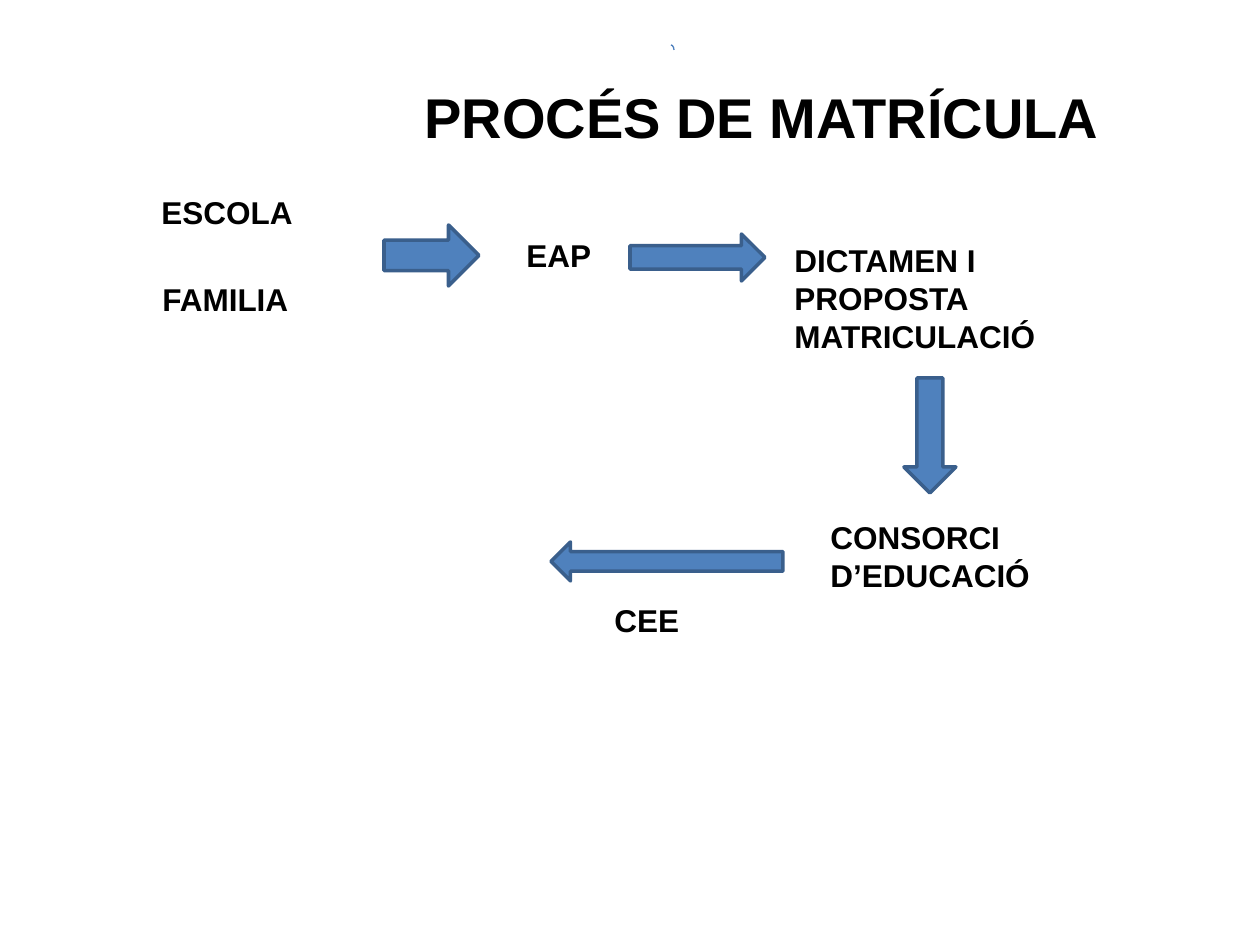
"""Build a one-slide flow diagram of the school enrolment process."""
from pptx import Presentation
from pptx.dml.color import RGBColor
from pptx.enum.shapes import MSO_SHAPE
from pptx.enum.text import MSO_AUTO_SIZE
from pptx.util import Emu, Pt

PIXEL = 914400 / 126
COLORS = {"text": "000000", "fill": "4F81BD", "outline": "3A5F8C", "arc": "4B7EBC"}

TITLE = ("PROCÉS DE MATRÍCULA", (412, 76, 706, 81))
FAMILY_LABELS = [
    ("ESCOLA", (149, 187, 157, 50)),
    ("FAMILIA", (150, 274, 152, 50)),
]
STEP_LABELS = [
    ("EAP", (514, 230, 154, 50)),
    ("DICTAMEN I PROPOSTA MATRICULACIÓ", (782, 235, 285, 127)),
    ("CONSORCI D’EDUCACIÓ", (818, 512, 268, 89)),
    ("CEE", (602, 595, 210, 50)),
]
ARROWS = [
    (MSO_SHAPE.RIGHT_ARROW, (384, 225, 95, 61)),
    (MSO_SHAPE.RIGHT_ARROW, (630, 234, 135, 47)),
    (MSO_SHAPE.DOWN_ARROW, (904, 378, 52, 115)),
    (MSO_SHAPE.LEFT_ARROW, (551, 542, 232, 39)),
]
ARC_FRAME = (668, 45, 6, 10)


def scale(frame):
    return [Emu(round(length * PIXEL)) for length in frame]


def color(name):
    return RGBColor.from_string(COLORS[name])


def add_text(page, text, frame, size=18, wrap=True):
    box = page.shapes.add_textbox(*scale(frame))
    box.text_frame.word_wrap = wrap
    box.text_frame.auto_size = MSO_AUTO_SIZE.SHAPE_TO_FIT_TEXT
    span = box.text_frame.paragraphs[0].add_run()
    span.text = text
    span.font.name = "Arial"
    span.font.size = Pt(size)
    span.font.bold = True
    span.font.color.rgb = color("text")


def add_outlined(page, kind, frame, outline, width, fill=None):
    shape = page.shapes.add_shape(kind, *scale(frame))
    shape.shadow.inherit = False
    shape.line.color.rgb = color(outline)
    shape.line.width = Pt(width)
    if fill:
        shape.fill.solid()
        shape.fill.fore_color.rgb = color(fill)
    else:
        shape.fill.background()


def main():
    deck = Presentation()
    deck.slide_width, deck.slide_height = scale((1260, 945))
    page = deck.slides.add_slide(deck.slide_layouts[6])
    add_text(page, *TITLE, size=32, wrap=False)
    for text, frame in FAMILY_LABELS:
        add_text(page, text, frame, wrap=False)
    for text, frame in STEP_LABELS:
        add_text(page, text, frame)
    add_outlined(page, MSO_SHAPE.ARC, ARC_FRAME, "arc", 0.75)
    for kind, frame in ARROWS:
        add_outlined(page, kind, frame, "outline", 2, fill="fill")
    deck.save("out.pptx")


if __name__ == "__main__":
    main()
